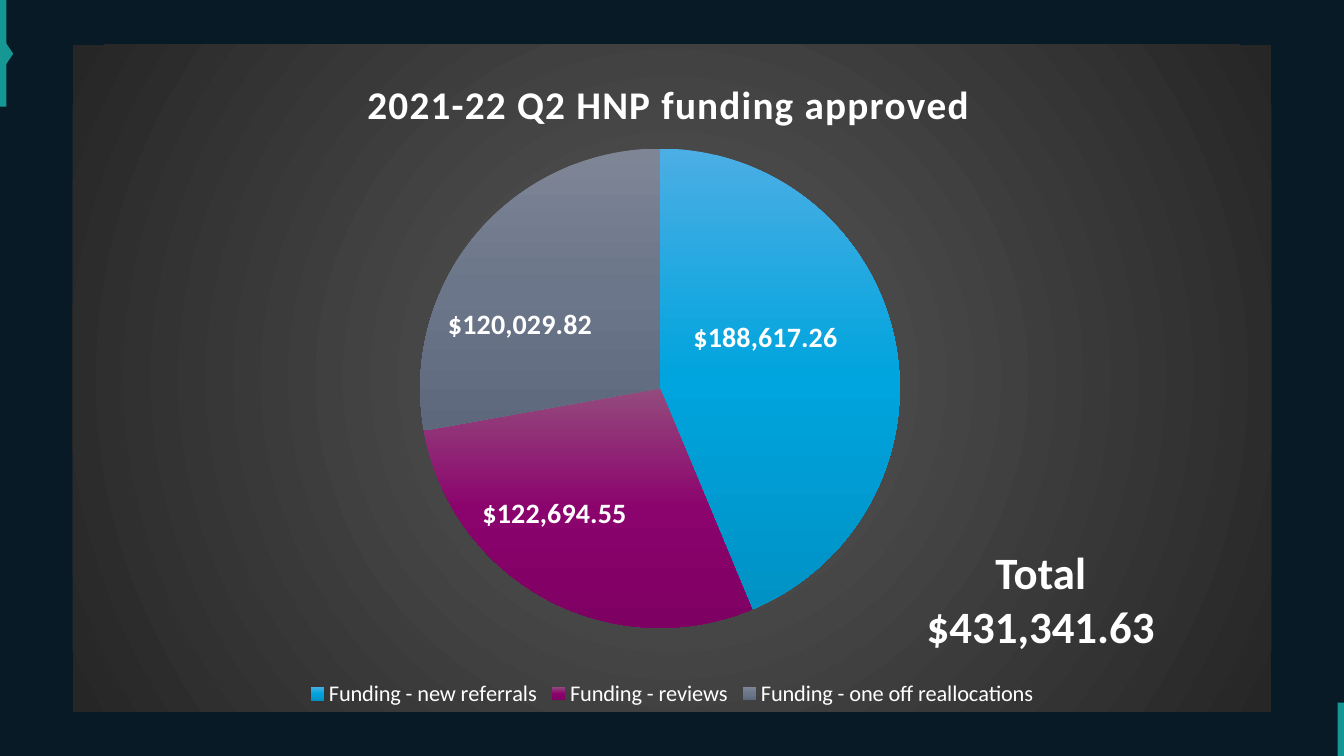
"""Build the quarterly funding slide: a pie chart on a dark panel with its total."""
from dataclasses import dataclass

from lxml.etree import _Element
from pptx import Presentation
from pptx.chart.chart import Chart
from pptx.chart.data import CategoryChartData
from pptx.dml.color import RGBColor
from pptx.enum.chart import XL_CHART_TYPE, XL_LABEL_POSITION, XL_LEGEND_POSITION
from pptx.enum.shapes import MSO_SHAPE
from pptx.enum.text import MSO_ANCHOR, PP_ALIGN
from pptx.oxml import parse_xml
from pptx.oxml.ns import nsdecls, qn
from pptx.slide import Slide
from pptx.text.text import Font
from pptx.util import Inches, Pt

PIE = XL_CHART_TYPE.PIE
LABEL_CENTER = XL_LABEL_POSITION.CENTER
LEGEND_BOTTOM = XL_LEGEND_POSITION.BOTTOM
RECTANGLE = MSO_SHAPE.RECTANGLE
TRIANGLE = MSO_SHAPE.ISOSCELES_TRIANGLE
MIDDLE = MSO_ANCHOR.MIDDLE
CENTER = PP_ALIGN.CENTER

WIDTH, HEIGHT = Inches(13.33), Inches(7.5)
COLUMN, ROW = WIDTH / 32, HEIGHT / 18
COLORS = {"black": "000000", "navy": "081A26", "teal": "159794", "white": "FFFFFF"}
PANEL_STOPS = ("595959", "262626")
MONEY = '"$"#,##0.00'


@dataclass(frozen=True)
class Area:
    """A rectangle in grid columns and rows."""
    left: float
    top: float
    width: float
    height: float

    def lengths(self) -> tuple[int, int, int, int]:
        """Give the area in EMU."""
        return (round(self.left * COLUMN), round(self.top * ROW),
                round(self.width * COLUMN), round(self.height * ROW))


@dataclass(frozen=True)
class Ornament:
    """A plain coloured shape of the backdrop."""
    preset: MSO_SHAPE
    area: Area
    color: str
    rotation: int = 0


@dataclass(frozen=True)
class Slice:
    """A pie slice with its gradient and label shift in shares of the chart."""
    name: str
    amount: float
    stops: tuple[str, ...]
    shift: tuple[float, float]


ORNAMENTS = (
    Ornament(RECTANGLE, Area(0, 0, 32, 18), "navy"),
    Ornament(RECTANGLE, Area(0, 0, 0.15, 2.54), "teal"),
    Ornament(TRIANGLE, Area(-0.2, 1.15, 0.77, 0.26), "teal", 90),
    Ornament(RECTANGLE, Area(31.85, 16.73, 0.15, 1.27), "teal"),
)
SLICES = (
    Slice("Funding - new referrals", 188617.26, ("4BAEE4", "00A4DE", "0092C5"), (-0.01, -0.04)),
    Slice("Funding - reviews", 122694.55, ("944B7D", "8B036D", "7E0063"), (-0.04, 0.03)),
    Slice("Funding - one off reallocations", 120029.82, ("7E8696", "6C768A", "5E687C"), (-0.04, 0.02)),
)
CHART_AREA = Area(1.73, 1.06, 28.54, 15.89)
TOTAL_AREA = Area(20.71, 13.06, 8.14, 2.4)


def style_font(font: Font, size: float, bold: bool = False) -> None:
    """Set white Calibri at the given size."""
    for name, value in {"name": "Calibri", "size": Pt(size), "bold": bold}.items():
        setattr(font, name, value)
    font.color.rgb = RGBColor.from_string(COLORS["white"])


def gradient(stops: tuple[str, ...], direction: str) -> _Element:
    """Make a gradient fill with evenly spaced stops."""
    step = 100000 // (len(stops) - 1)
    marks = "".join(f'<a:gs pos="{index * step}"><a:srgbClr val="{color}"/></a:gs>'
                    for index, color in enumerate(stops))
    return parse_xml(f'<a:gradFill {nsdecls("a")} rotWithShape="1">'
                     f'<a:gsLst>{marks}</a:gsLst>{direction}</a:gradFill>')


def set_layout(parent: _Element, index: int, settings: dict[str, float | str]) -> None:
    """Give a chart part a manual layout."""
    for old in parent.findall(qn("c:layout")):
        parent.remove(old)
    entries = "".join(f'<c:{name} val="{value}"/>' for name, value in settings.items())
    parent.insert(index, parse_xml(f'<c:layout {nsdecls("c")}><c:manualLayout>{entries}'
                                   '</c:manualLayout></c:layout>'))


def add_ornament(page: Slide, ornament: Ornament) -> None:
    """Draw one backdrop shape."""
    shape = page.shapes.add_shape(ornament.preset, *ornament.area.lengths())
    shape.rotation = ornament.rotation
    shape.shadow.inherit = False
    shape.fill.solid()
    shape.fill.fore_color.rgb = RGBColor.from_string(COLORS[ornament.color])
    shape.line.fill.background()


def style_slices(chart: Chart) -> None:
    """Colour the slices and place their labels."""
    series = chart.plots[0].series[0]
    for index, part in enumerate(SLICES):
        point = series.points[index]
        point.format.fill.background()
        properties = series._element.xpath("c:dPt/c:spPr")[index]
        properties.clear()
        properties.append(gradient(part.stops, '<a:lin ang="5400000" scaled="0"/>'))
        label = point.data_label
        style_font(label.font, 20, True)
        label.position = LABEL_CENTER
        mark = series._element.xpath("c:dLbls/c:dLbl")[index]
        set_layout(mark, 1, dict(zip("xy", part.shift)))


def add_funding_chart(page: Slide) -> None:
    """Draw the pie chart with title, legend and gradient panel."""
    data = CategoryChartData(number_format=MONEY)
    data.categories = [part.name for part in SLICES]
    data.add_series("Series 1", [part.amount for part in SLICES])
    chart = page.shapes.add_chart(PIE, *CHART_AREA.lengths(), data).chart
    style_font(chart.font, 10)
    chart.plots[0].vary_by_categories = True

    para = chart.chart_title.text_frame.paragraphs[0]
    span = para.add_run()
    span.text = "2021-22 Q2 HNP funding approved"
    style_font(span.font, 28, True)
    span.font._element.set("spc", "100")
    set_layout(chart.chart_title._element, 1,
               {"xMode": "edge", "yMode": "edge", "x": 0.24, "y": 0.04})

    chart.has_legend = True
    chart.legend.position = LEGEND_BOTTOM
    chart.legend.include_in_layout = False
    style_font(chart.legend.font, 16)
    style_slices(chart)

    space = chart._chartSpace
    set_layout(space.chart.plotArea, 0,
               {"layoutTarget": "inner", "xMode": "edge", "yMode": "edge",
                "x": 0.29, "y": 0.155, "w": 0.4, "h": 0.72})
    panel = parse_xml(f'<c:spPr {nsdecls("c", "a")}><a:ln><a:noFill/></a:ln></c:spPr>')
    panel.insert(0, gradient(PANEL_STOPS, '<a:path path="circle"><a:fillToRect l="50000" '
                             't="50000" r="50000" b="50000"/></a:path>'))
    space.chart.addnext(panel)


def add_total(page: Slide) -> None:
    """Write the total beside the pie."""
    frame = page.shapes.add_textbox(*TOTAL_AREA.lengths()).text_frame
    frame.word_wrap = False
    frame.vertical_anchor = MIDDLE
    para = frame.paragraphs[0]
    para.alignment = CENTER
    span = para.add_run()
    span.text = "Total $431,341.63"
    style_font(span.font, 32, True)


def main() -> None:
    """Build and save the deck."""
    deck = Presentation()
    deck.slide_width, deck.slide_height = WIDTH, HEIGHT
    page = deck.slides.add_slide(deck.slide_layouts[6])
    page.background.fill.solid()
    page.background.fill.fore_color.rgb = RGBColor.from_string(COLORS["black"])
    for ornament in ORNAMENTS:
        add_ornament(page, ornament)
    add_funding_chart(page)
    add_total(page)
    deck.save("out.pptx")


if __name__ == "__main__":
    main()
